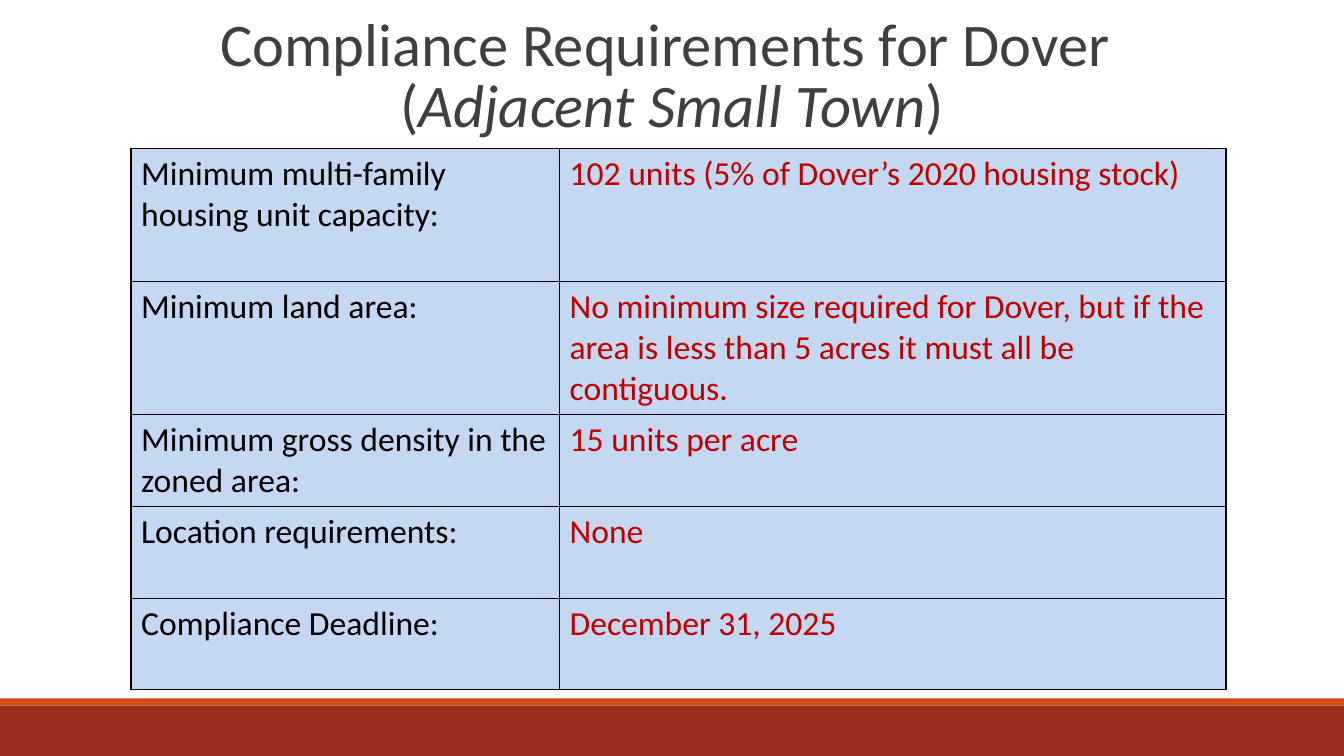
from lxml import etree
from pptx import Presentation
from pptx.dml.color import RGBColor
from pptx.enum import shapes, text
from pptx.oxml import ns
from pptx.util import Inches, Pt

FONT = "Calibri"
BRICK = RGBColor(0x9B, 0x2D, 0x1F)
ORANGE = RGBColor(0xD3, 0x48, 0x17)
GREY = RGBColor(0x3F, 0x3F, 0x3F)
BLACK = RGBColor(0, 0, 0)
RED = RGBColor(0xC0, 0, 0)
PALE_BLUE = RGBColor(0xC5, 0xD8, 0xF1)

REQUIREMENTS = [
    ("Minimum multi-family housing unit capacity:",
     "102 units (5% of Dover’s 2020 housing stock)", 1.32),
    ("Minimum land area:",
     "No minimum size required for Dover, but if the area is less than "
     "5 acres it must all be contiguous.", 1.32),
    ("Minimum gross density in the zoned area:", "15 units per acre", 0.91),
    ("Location requirements:", "None", 0.91),
    ("Compliance Deadline:", "December 31, 2025", 0.91),
]


def add_footer(slide, left, top, width, height):
    """Draw the footer band with its thin accent stripe on top."""
    stripe = 0.07
    for y, h, color in ((top + stripe, height - stripe, BRICK),
                        (top, stripe, ORANGE)):
        sp = slide.shapes.add_shape(
            shapes.MSO_SHAPE.RECTANGLE,
            Inches(left), Inches(y), Inches(width), Inches(h))
        sp.shadow.inherit = False
        sp.fill.solid()
        sp.fill.fore_color.rgb = color
        sp.line.fill.background()


def add_title(slide, left, top, width, height):
    """Place the two-line title with the town type in italics."""
    sp = slide.shapes.title
    sp.left, sp.top = Inches(left), Inches(top)
    sp.width, sp.height = Inches(width), Inches(height)
    tf = sp.text_frame
    tf.word_wrap = True
    tf.auto_size = text.MSO_AUTO_SIZE.NONE
    tf.vertical_anchor = text.MSO_ANCHOR.MIDDLE
    p = tf.paragraphs[0]
    p.alignment = text.PP_ALIGN.CENTER
    p.line_spacing = 0.85
    p.font.name, p.font.size = FONT, Pt(43.2)
    p.font.color.rgb = GREY
    p.add_run().text = "Compliance Requirements for Dover "
    p.add_line_break()
    p.add_run().text = "("
    r = p.add_run()
    r.text = "Adjacent Small Town"
    r.font.italic = True
    p.add_run().text = ")"


def add_borders(cell):
    """Outline a cell with thin black lines."""
    tc_pr = cell._tc.get_or_add_tcPr()
    for side in ("a:lnL", "a:lnR", "a:lnT", "a:lnB"):
        ln = etree.SubElement(tc_pr, ns.qn(side), w=str(Pt(1)))
        fill = etree.SubElement(ln, ns.qn("a:solidFill"))
        etree.SubElement(fill, ns.qn("a:srgbClr"), val=str(BLACK))


def add_requirements(slide, left, top, width, label_width):
    """Build the table of requirements and their values."""
    height = sum(row[2] for row in REQUIREMENTS)
    table = slide.shapes.add_table(
        len(REQUIREMENTS), 2, Inches(left), Inches(top),
        Inches(width), Inches(height)).table
    table.first_row = table.horz_banding = False
    table.columns[0].width = Inches(label_width)
    table.columns[1].width = Inches(width - label_width)
    for row, (label, value, row_height) in zip(table.rows, REQUIREMENTS):
        row.height = Inches(row_height)
        for cell, words, color in zip(row.cells, (label, value), (BLACK, RED)):
            add_borders(cell)
            cell.fill.solid()
            cell.fill.fore_color.rgb = PALE_BLUE
            cell.text = words
            p = cell.text_frame.paragraphs[0]
            p.font.name, p.font.size = FONT, Pt(24)
            p.font.color.rgb = color


def main():
    """Create the slide and save it."""
    prs = Presentation()
    prs.slide_width, prs.slide_height = Inches(13.33), Inches(7.5)
    slide = prs.slides.add_slide(prs.slide_layouts[5])
    add_footer(slide, 0, 6.93, 13.33, 0.57)
    add_title(slide, 1.83, 0.22, 9.67, 1.12)
    add_requirements(slide, 1.3, 1.47, 10.86, 4.25)
    prs.save("out.pptx")


if __name__ == "__main__":
    main()
